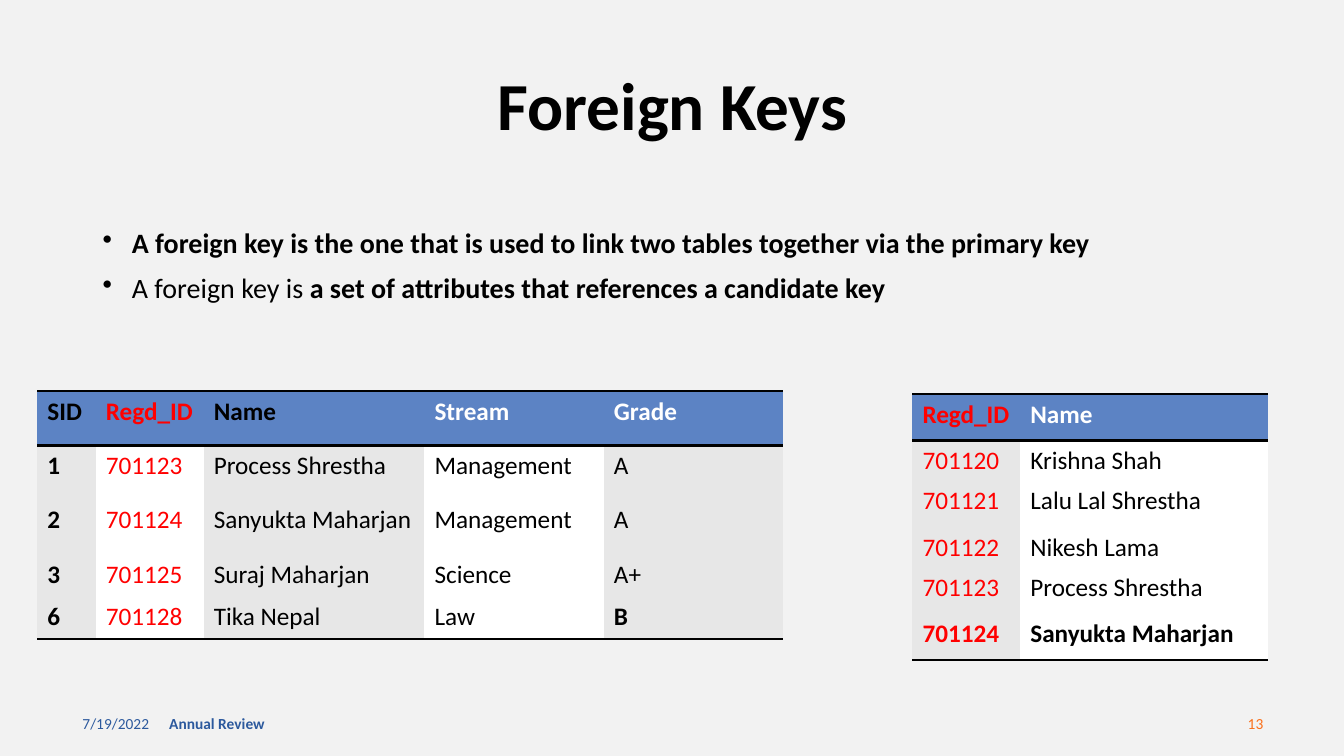
from lxml.etree import SubElement
from pptx import Presentation
from pptx.dml.color import RGBColor
from pptx.enum.text import MSO_ANCHOR, MSO_AUTO_SIZE, PP_ALIGN
from pptx.oxml.ns import qn
from pptx.util import Inches, Pt

BACKGROUND = RGBColor(0xF2, 0xF2, 0xF2)
BLACK = RGBColor(0x00, 0x00, 0x00)
WHITE = RGBColor(0xFF, 0xFF, 0xFF)
RED = RGBColor(0xFF, 0x00, 0x00)
HEADER_BLUE = RGBColor(0x5C, 0x83, 0xC4)
BAND_GREY = RGBColor(0xE7, 0xE7, 0xE7)
FOOTER_BLUE = RGBColor(0x2C, 0x59, 0x9D)
FOOTER_ORANGE = RGBColor(0xFA, 0x6F, 0x1A)

STUDENTS = [
    ["SID", "Regd_ID", "Name", "Stream", "Grade"],
    ["1", "701123", "Process Shrestha", "Management", "A"],
    ["2", "701124", "Sanyukta Maharjan", "Management", "A"],
    ["3", "701125", "Suraj Maharjan", "Science", "A+"],
    ["6", "701128", "Tika Nepal", "Law", "B"],
]
REGISTRATIONS = [
    ["Regd_ID", "Name"],
    ["701120", "Krishna Shah"],
    ["701121", "Lalu Lal Shrestha"],
    ["701122", "Nikesh Lama"],
    ["701123", "Process Shrestha"],
    ["701124", "Sanyukta Maharjan"],
]
BULLETS = [
    [("A foreign key is the one that is used to link two tables together via the primary key", True)],
    [("A foreign key is ", False), ("a set of attributes that references a candidate key", True)],
]


class SlideBuilder:
    """Hold the style and current page; lengths are percentages of the slide."""

    font_name = "Calibri"

    def __init__(self, deck):
        """Add a title-only page with a plain background."""
        self.deck = deck
        self.page = deck.slides.add_slide(deck.slide_layouts[5])
        self.page.background.fill.solid()
        self.page.background.fill.fore_color.rgb = BACKGROUND

    def across(self, share):
        """Convert a percentage of the slide width."""
        return round(self.deck.slide_width * share / 100)

    def down(self, share):
        """Convert a percentage of the slide height."""
        return round(self.deck.slide_height * share / 100)

    def area(self, left, top, width, height):
        """Convert a rectangle given in percentages."""
        return self.across(left), self.down(top), self.across(width), self.down(height)

    def style(self, para, size, color, bold=None):
        """Set the font of a paragraph."""
        para.font.name = self.font_name
        para.font.size = Pt(size)
        para.font.color.rgb = color
        para.font.bold = bold

    def title(self, text, *place):
        """Fill and move the title placeholder."""
        box = self.page.shapes.title
        box.left, box.top, box.width, box.height = self.area(*place)
        box.text_frame.text = text
        box.text_frame.auto_size = MSO_AUTO_SIZE.NONE
        box.text_frame.vertical_anchor = MSO_ANCHOR.MIDDLE
        para = box.text_frame.paragraphs[0]
        para.alignment = PP_ALIGN.CENTER
        para.line_spacing = 0.9
        self.style(para, 48, BLACK, True)

    def text_box(self, *place):
        """Add a wrapping text box and return its text frame."""
        frame = self.page.shapes.add_textbox(*self.area(*place)).text_frame
        frame.word_wrap = True
        return frame

    def footer(self, text, left, width, color, bold=False, align=PP_ALIGN.LEFT):
        """Add one text of the footer line."""
        frame = self.text_box(left, 93.07, width, 5.33)
        frame.vertical_anchor = MSO_ANCHOR.MIDDLE
        para = frame.paragraphs[0]
        para.text = text
        para.alignment = align
        self.style(para, 11, color, bold)

    def bullets(self, items, *place):
        """Add a bulleted list whose items are (text, bold) spans."""
        frame = self.text_box(*place)
        for index, item in enumerate(items):
            para = frame.add_paragraph() if index else frame.paragraphs[0]
            para.line_spacing = 0.9
            para.space_before = Pt(10)
            self.style(para, 20, BLACK)
            for text, bold in item:
                span = para.add_run()
                span.text = text
                span.font.bold = bold
            properties = para._p.get_or_add_pPr()
            indent = Inches(0.29)
            properties.set("marL", str(indent))
            properties.set("indent", str(-indent))
            mark = properties.makeelement(qn("a:buChar"), {"char": "•"})
            properties.find(qn("a:defRPr")).addprevious(mark)

    def borders(self, cell, ruled_sides):
        """Rule the named sides of a cell in black and clear the others."""
        properties = cell._tc.get_or_add_tcPr()
        for side in "LRTB":
            line = SubElement(properties, qn(f"a:ln{side}"), w=str(Pt(2)))
            if side in ruled_sides:
                fill = SubElement(line, qn("a:solidFill"))
                SubElement(fill, qn("a:srgbClr"), val=str(BLACK))
            else:
                SubElement(line, qn("a:noFill"))

    def table(self, rows, left, top, widths, heights, header_colors, bold_cells):
        """Add a table with a blue header, banded columns and red Regd_ID."""
        place = self.area(left, top, sum(widths), sum(heights))
        grid = self.page.shapes.add_table(len(rows), len(widths), *place).table
        grid.first_row = grid.horz_banding = False
        for column, width in zip(grid.columns, widths):
            column.width = self.across(width)
        for line, height in zip(grid.rows, heights):
            line.height = self.down(height)
        key_column = rows[0].index("Regd_ID")
        for r, values in enumerate(rows):
            ruled = ("T" if r < 2 else "") + ("B" if r in (0, len(rows) - 1) else "")
            for c, value in enumerate(values):
                cell = grid.cell(r, c)
                self.borders(cell, ruled)
                cell.fill.solid()
                band = WHITE if c % 2 else BAND_GREY
                cell.fill.fore_color.rgb = band if r else HEADER_BLUE
                cell.text = value
                body_color = RED if c == key_column else BLACK
                color = body_color if r else header_colors[c]
                bold = r == 0 or (r, c) in bold_cells
                self.style(cell.text_frame.paragraphs[0], 18, color, bold)


def main():
    """Build the Foreign Keys slide."""
    deck = Presentation()
    deck.slide_width, deck.slide_height = Inches(13.33), Inches(7.5)
    slide = SlideBuilder(deck)
    slide.footer("7/19/2022", 5.4, 22.5, FOOTER_BLUE)
    slide.footer("Annual Review", 11.85, 33.75, FOOTER_BLUE, bold=True)
    slide.footer("13", 72.24, 22.5, FOOTER_ORANGE, align=PP_ALIGN.RIGHT)
    slide.bullets(BULLETS, 6.9, 29.73, 86.27, 60)
    slide.title("Foreign Keys", 6.9, 9.2, 86.27, 10.27)
    slide.table(
        STUDENTS, 2.78, 51.73,
        widths=[4.35, 8.03, 16.43, 13.35, 13.35],
        heights=[7.2] * 3 + [5.6] * 2,
        header_colors=[BLACK, RED, BLACK, WHITE, WHITE],
        bold_cells={(1, 0), (2, 0), (3, 0), (4, 0), (4, 4)},
    )
    slide.table(
        REGISTRATIONS, 67.89, 52.13,
        widths=[8.03, 18.45],
        heights=[6.13, 4.67, 6.13, 4.67, 6.13, 6.13],
        header_colors=[RED, WHITE],
        bold_cells={(5, 0), (5, 1)},
    )
    deck.save("out.pptx")


if __name__ == "__main__":
    main()
